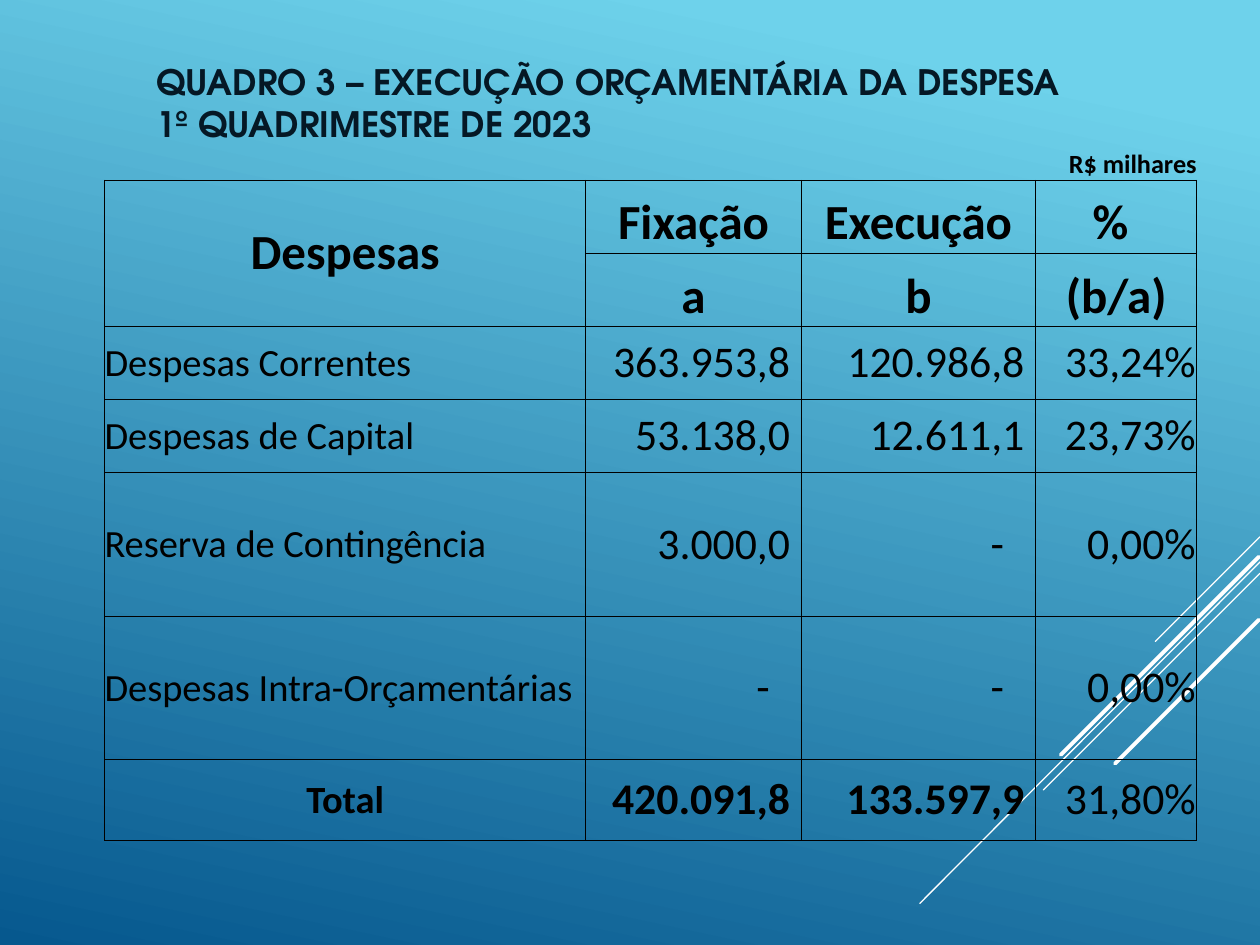
from lxml.etree import SubElement
from pptx import Presentation
from pptx.dml.color import RGBColor
from pptx.enum.shapes import MSO_CONNECTOR
from pptx.enum.text import MSO_ANCHOR, MSO_AUTO_SIZE, PP_ALIGN
from pptx.oxml import parse_xml
from pptx.oxml.ns import nsdecls, qn
from pptx.util import Inches, Pt

COLORS = {
    "sky": "6ED2EB",
    "deep": "06588E",
    "ray": "FFFFFF",
    "title": "051825",
    "ink": "000000",
}
RAYS = [
    (10, 4.26, 9.17, 5.09, 0.75),
    (10, 4.46, 7.3, 7.17, 0.75),
    (10, 4.55, 8.28, 6.27, 0.75),
    (9.99, 4.42, 8.42, 5.99, 2.25),
    (9.99, 4.92, 8.85, 6.06, 2.25),
]
COLUMN_WIDTHS = [3.82, 0.12, 1.59, 0.91, 0.95, 1.28]
ROW_HEIGHTS = [0.83, 0.58, 0.58, 0.58, 0.58, 1.14, 1.14, 0.64]
VALUE_COLUMNS = [1, 3, 5]
HEADERS = [["Fixação", "Execução", "%"], ["a", "b", "(b/a)"]]
EXPENSES = [
    ("Despesas Correntes", "363.953,8", "120.986,8", "33,24%"),
    ("Despesas de Capital", "53.138,0", "12.611,1", "23,73%"),
    ("Reserva de Contingência", "3.000,0", "-", "0,00%"),
    ("Despesas Intra-Orçamentárias", "-", "-", "0,00%"),
    ("Total", "420.091,8", "133.597,9", "31,80%"),
]


def rgb(name):
    return RGBColor.from_string(COLORS[name])


def paint_background(slide):
    fill = slide.background.fill
    fill.gradient()
    fill.gradient_angle = 360 - 102
    for stop, name, position in zip(fill.gradient_stops, ("sky", "deep"), (0.1, 1)):
        stop.color.rgb = rgb(name)
        stop.position = position


def add_rays(slide):
    for x1, y1, x2, y2, width in RAYS:
        ray = slide.shapes.add_connector(
            MSO_CONNECTOR.STRAIGHT, Inches(x1), Inches(y1), Inches(x2), Inches(y2))
        ray.line.color.rgb = rgb("ray")
        ray.line.width = Pt(width)
        properties = ray._element.spPr
        properties.find(qn("a:ln")).set("cap", "rnd")
        SubElement(properties, qn("a:effectLst"))


def place_title(slide, left, top, width, height):
    title = slide.shapes.title
    title.left, title.top = Inches(left), Inches(top)
    title.width, title.height = Inches(width), Inches(height)
    frame = title.text_frame
    frame.text = "QUADRO 3 – EXECUÇÃO ORÇAMENTÁRIA DA DESPESA\v1º QUADRIMESTRE DE 2023"
    frame.word_wrap = True
    frame.auto_size = MSO_AUTO_SIZE.NONE
    frame.vertical_anchor = MSO_ANCHOR.MIDDLE
    paragraph = frame.paragraphs[0]
    paragraph.alignment = PP_ALIGN.LEFT
    font = paragraph.font
    font.name, font.size, font.bold = "TeX Gyre Adventor", Pt(20), True
    font.color.rgb = rgb("title")


def format_cell(cell, sides):
    cell.margin_left = cell.margin_right = cell.margin_top = cell.margin_bottom = 0
    cell.fill.background()
    properties = cell._tc.get_or_add_tcPr()
    for index, side in enumerate("LRTB"):
        if side in sides:
            paint = f'<a:solidFill><a:srgbClr val="{COLORS["ink"]}"/></a:solidFill>'
        else:
            paint = "<a:noFill/>"
        properties.insert(index, parse_xml(
            f'<a:ln{side} {nsdecls("a")} w="{Pt(0.5)}">{paint}</a:ln{side}>'))


def write(cell, text, size, alignment, bold=False, anchor=MSO_ANCHOR.MIDDLE, right=0):
    cell.text = text
    cell.vertical_anchor = anchor
    cell.margin_right = Inches(right)
    paragraph = cell.text_frame.paragraphs[0]
    paragraph.alignment = alignment
    font = paragraph.font
    font.name, font.size, font.bold = "Calibri", Pt(size), bold
    font.color.rgb = rgb("ink")


def add_expense_table(slide, left, top, width, height):
    table = slide.shapes.add_table(
        len(ROW_HEIGHTS), len(COLUMN_WIDTHS),
        Inches(left), Inches(top), Inches(width), Inches(height)).table
    table.first_row = table.horz_banding = False
    for column, column_width in zip(table.columns, COLUMN_WIDTHS):
        column.width = Inches(column_width)
    for index, row_height in enumerate(ROW_HEIGHTS):
        table.rows[index].height = Inches(row_height)
        for cell in table.rows[index].cells:
            format_cell(cell, "LRTB" if index else "B")
            cell.text_frame.paragraphs[0].font.size = Pt(15)

    table.cell(1, 0).merge(table.cell(2, 0))
    for row in range(1, len(ROW_HEIGHTS)):
        for column in VALUE_COLUMNS[:2]:
            table.cell(row, column).merge(table.cell(row, column + 1))

    write(table.cell(0, 5), "R$ milhares", 15, PP_ALIGN.RIGHT, True, MSO_ANCHOR.BOTTOM)
    write(table.cell(1, 0), "Despesas", 28, PP_ALIGN.CENTER, True)
    for row, labels in enumerate(HEADERS, 1):
        for column, label in zip(VALUE_COLUMNS, labels):
            write(table.cell(row, column), label, 28, PP_ALIGN.CENTER, True,
                  MSO_ANCHOR.BOTTOM, 0.09 if label == "%" else 0)
    for row, (name, *values) in enumerate(EXPENSES, 3):
        total = name == "Total"
        write(table.cell(row, 0), name, 22,
              PP_ALIGN.CENTER if total else PP_ALIGN.LEFT, total)
        for column, value in zip(VALUE_COLUMNS, values):
            percent = column == VALUE_COLUMNS[-1]
            right = 0.01 if percent else 0.25 if value == "-" else 0.09
            write(table.cell(row, column), value, 25, PP_ALIGN.RIGHT,
                  total and not percent, right=right)


def main():
    presentation = Presentation()
    presentation.slide_width, presentation.slide_height = Inches(10), Inches(7.5)
    slide = presentation.slides.add_slide(presentation.slide_layouts[5])
    paint_background(slide)
    add_rays(slide)
    place_title(slide, 1.14, 0.44, 8.5, 0.74)
    add_expense_table(slide, 0.83, 0.6, sum(COLUMN_WIDTHS), sum(ROW_HEIGHTS))
    presentation.save("out.pptx")


if __name__ == "__main__":
    main()
